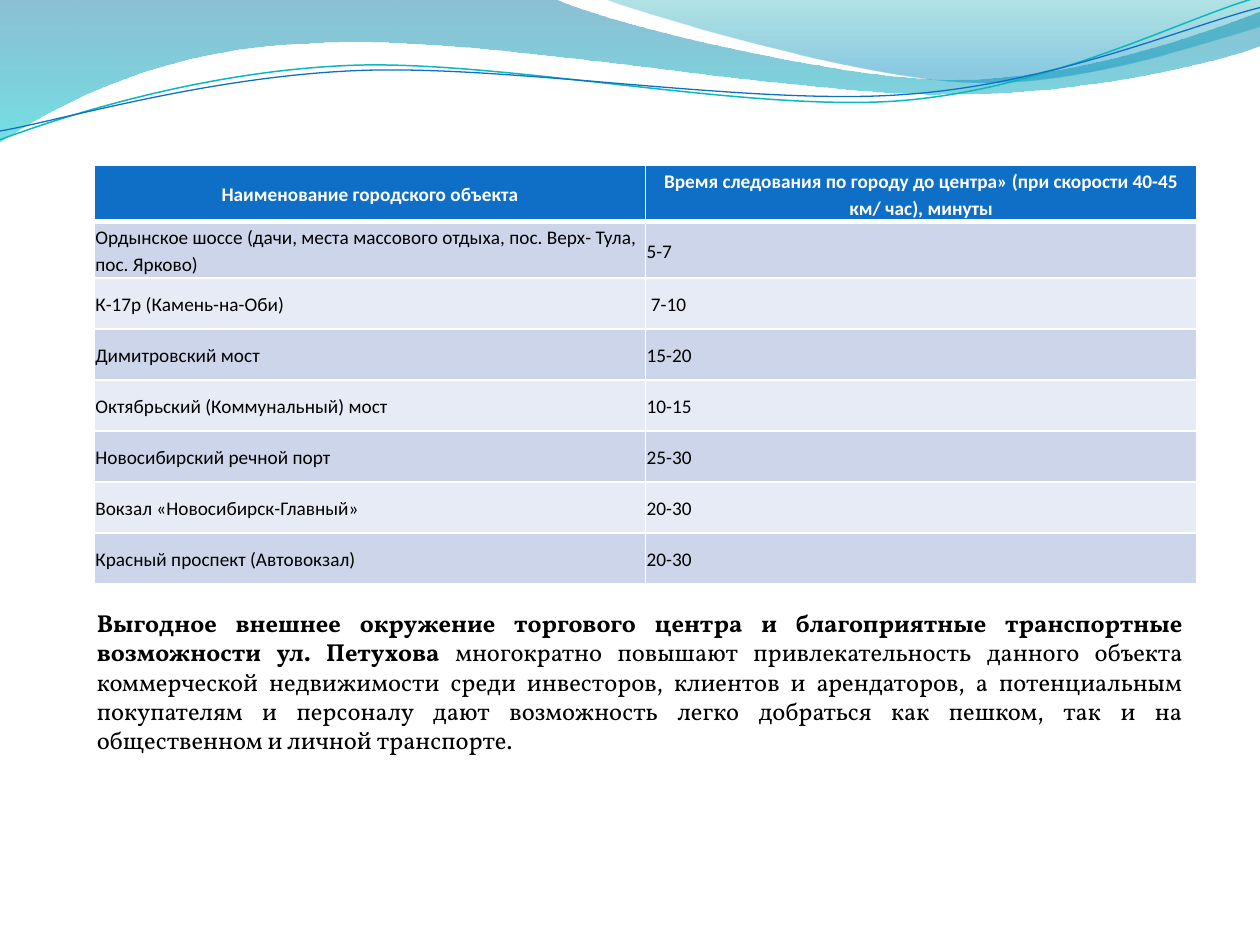
from lxml.etree import SubElement
from pptx import Presentation
from pptx.dml.color import RGBColor
from pptx.enum.text import MSO_ANCHOR as Anchor, MSO_AUTO_SIZE as AutoSize, PP_ALIGN as Align
from pptx.oxml import parse_xml
from pptx.oxml.ns import nsdecls, qn
from pptx.util import Pt

color = RGBColor.from_string


def write(paragraph, text, size=11, face="Calibri", ink="000000", bold=False, align=Align.LEFT):
    paragraph.alignment = align
    run = paragraph.add_run()
    run.text = text
    run.font.size = Pt(size)
    run.font.name = face
    run.font.bold = bold
    run.font.color.rgb = color(ink)


deck = Presentation()
deck.slide_width, deck.slide_height = Pt(720), Pt(540)
slide = deck.slides.add_slide(deck.slide_layouts[6])

wide_wave = [
    [(0, 0)],
    [(316.8, -0.7)],
    [(342.7, 12.2), (478, 45.4), (545.8, 45.4)],
    [(614.2, 45.4), (689.8, 18.7), (720, 6.5)],
    [(720.7, 25.9)],
    [(707.8, 31.7), (626.4, 54.7), (537.1, 54)],
    [(447.8, 54), (275, 20.2), (185, 24.5)],
    [(92.9, 25.9), (33.1, 59.8), (-0.7, 81.4)],
    [(0, 0)],
]
right_wave = [
    [(344.9, -0.7)],
    [(366.5, 7.9), (491, 44.6), (553.7, 46.8)],
    [(616.3, 49.7), (691.9, 23), (720, 15.1)],
    [(720, 0)],
    [(344.9, -0.7)],
]
teal_line = [
    [(-1.4, 62.9)],
    [(33.8, 51.7), (114.1, 29.4), (199.8, 29.9)],
    [(284.8, 30.3), (425.8, 67.3), (512.4, 64.9)],
    [(599, 62.4), (676.4, 25.7), (720.2, 15.5)],
]
blue_line = [
    [(-1.1, 57.9)],
    [(32.9, 53.7), (118.3, 32.5), (204.1, 33)],
    [(290.6, 33.4), (428.9, 63.8), (515.5, 61.4)],
    [(601.3, 59.6), (678.4, 30.1), (721.4, 21.3)],
]
waves = [
    (wide_wave, [(0, "0074A1", 45), (1, "00C6CF", 55)], None),
    (right_wave, [(0, "00A1A9", 30), (0.8, "008BBF", 45)], None),
    (teal_line, None, ("0AB8BF", 0.85)),
    (blue_line, None, ("0F6FC6", 0.75)),
]
for segments, gradient, stroke in waves:
    outline = [(Pt(x), Pt(y)) for segment in segments for x, y in segment]
    builder = slide.shapes.build_freeform(*outline[0])
    builder.add_line_segments(outline[1:], close=gradient is not None)
    wave = builder.convert_to_shape()
    wave.shadow.inherit = False

    straight = iter(list(wave._element.iter(qn("a:lnTo"))))
    for segment in segments[1:]:
        steps = [next(straight) for _ in segment]
        if len(steps) == 3:
            steps[0].tag = qn("a:cubicBezTo")
            for step in steps[1:]:
                steps[0].append(step[0])
                step.getparent().remove(step)

    if gradient:
        wave.line.fill.background()
        wave.fill.gradient()
        wave.fill.gradient_angle = 270
        for stop, (position, tint, _) in zip(wave.fill.gradient_stops, gradient):
            stop.position = position
            stop.color.rgb = color(tint)
        for tint, (_, _, opacity) in zip(wave._element.spPr.iter(qn("a:srgbClr")), gradient):
            SubElement(tint, qn("a:alpha"), val=str(opacity * 1000))
    else:
        wave.rotation = 357.3
        wave.fill.background()
        wave.line.color.rgb = color(stroke[0])
        wave.line.width = Pt(stroke[1])

travel_times = [
    ("Наименование городского объекта",
     "Время следования по городу до центра» (при скорости 40-45 км/ час), минуты"),
    ("Ордынское шоссе (дачи, места массового отдыха, пос. Верх- Тула, пос. Ярково)", "5-7"),
    ("К-17р (Камень-на-Оби)", " 7-10"),
    ("Димитровский мост", "15-20"),
    ("Октябрьский (Коммунальный) мост", "10-15"),
    ("Новосибирский речной порт", "25-30"),
    ("Вокзал «Новосибирск-Главный»", "20-30"),
    ("Красный проспект (Автовокзал)", "20-30"),
]
row_height = 29.15
table = slide.shapes.add_table(
    len(travel_times), 2, Pt(54), Pt(94.5), Pt(630), Pt(row_height * len(travel_times))
).table
for column in table.columns:
    column.width = Pt(315)
for row, texts in enumerate(travel_times):
    table.rows[row].height = Pt(row_height)
    header = row == 0
    band = "0F6FC6" if header else ("E7EBF5", "CCD5EA")[row % 2]
    for cell, text in zip(table.rows[row].cells, texts):
        cell.margin_left = cell.margin_right = cell.margin_top = cell.margin_bottom = Pt(0.5)
        cell.vertical_anchor = Anchor.MIDDLE
        cell.fill.solid()
        cell.fill.fore_color.rgb = color(band)
        paragraph = cell.text_frame.paragraphs[0]
        paragraph.line_spacing = 1.15
        paragraph.space_after = Pt(10)
        write(paragraph, text, bold=header, ink="FFFFFF" if header else "000000",
              align=Align.CENTER if header else Align.LEFT)
        for index, side in enumerate("LRTB" if header else ""):
            cell._tc.get_or_add_tcPr().insert(index, parse_xml(
                f'<a:ln{side} {nsdecls("a")} w="{Pt(3 if side == "B" else 1)}"><a:solidFill>'
                f'<a:srgbClr val="FFFFFF"/></a:solidFill></a:ln{side}>'
            ))

summary = slide.shapes.add_textbox(Pt(48.25), Pt(343.8), Pt(635), Pt(92)).text_frame
summary.word_wrap = True
summary.auto_size = AutoSize.SHAPE_TO_FIT_TEXT
for text, bold in [
    ("Выгодное внешнее окружение торгового центра и благоприятные транспортные "
     "возможности ул. Петухова", True),
    (" многократно повышают привлекательность данного объекта коммерческой недвижимости "
     "среди инвесторов, клиентов и арендаторов, а потенциальным покупателям и персоналу "
     "дают возможность легко добраться как пешком, так и на общественном и личной "
     "транспорте.", False),
]:
    write(summary.paragraphs[0], text, size=14, face="Vollkorn", bold=bold, align=Align.JUSTIFY)

deck.save("out.pptx")
